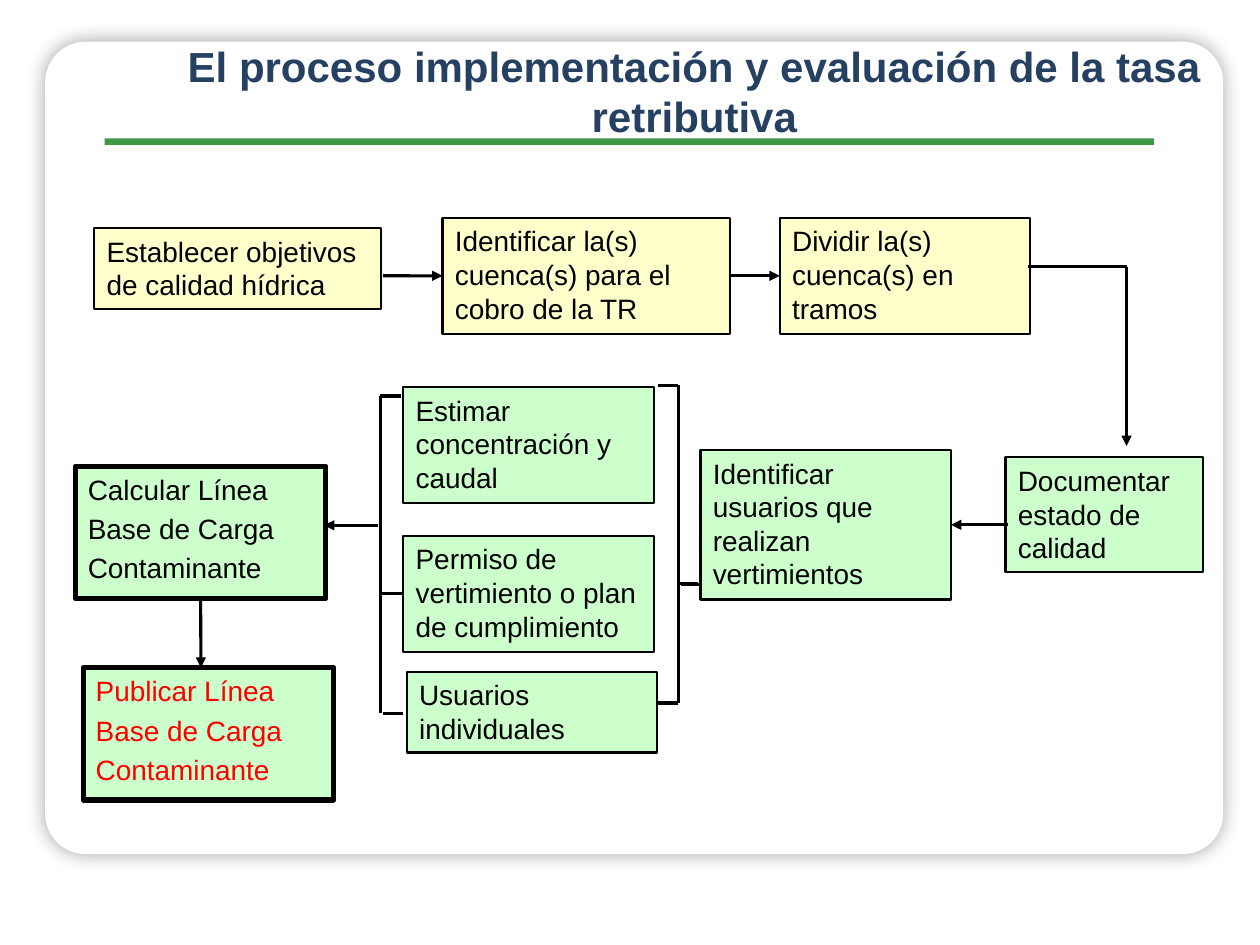
from lxml import etree
from pptx import Presentation
from pptx.dml.color import RGBColor
from pptx.enum.shapes import MSO_CONNECTOR as CONN, MSO_SHAPE as SHAPE
from pptx.enum.text import MSO_ANCHOR as ANCHOR, MSO_AUTO_SIZE as AUTO, PP_ALIGN as ALIGN
from pptx.oxml.ns import qn
from pptx.util import Cm, Pt

COLORS = {
    "white": "FFFFFF", "black": "000000", "green": "3D9948", "navy": "254061",
    "yellow": "FFFFCC", "mint": "CCFFCC", "red": "FF0000",
}
TOP, LEFT, BOTTOM, RIGHT = range(4)


def rgb(name):
    return RGBColor.from_string(COLORS[name])


class Diagram:
    font = "Arial"
    text_size = 16
    title_size = 24

    def __init__(self, slide):
        self.slide = slide
        self.shapes = slide.shapes

    def shape(self, kind, x, y, w, h, fill):
        s = self.shapes.add_shape(kind, Cm(x), Cm(y), Cm(w), Cm(h))
        s.shadow.inherit = False
        s.fill.solid()
        s.fill.fore_color.rgb = rgb(fill)
        s.line.fill.background()
        return s

    def panel(self, x, y, w, h):
        s = self.shape(SHAPE.ROUNDED_RECTANGLE, x, y, w, h, "white")
        s.adjustments[0] = 0.05
        effects = s._element.spPr.find(qn("a:effectLst"))
        shadow = etree.SubElement(effects, qn("a:outerShdw"), blurRad=str(Pt(10.8)),
                                  dist="0", dir="5400000", algn="ctr", rotWithShape="0")
        color = etree.SubElement(shadow, qn("a:srgbClr"), val=COLORS["black"])
        etree.SubElement(color, qn("a:alpha"), val="35000")

    def style(self, p, size, color, align, bold=False):
        p.alignment = align
        f = p.font
        f.name, f.size, f.bold = self.font, Pt(size), bold
        f.color.rgb = rgb(color)

    def title(self, text, x, y, w, h):
        s = self.shapes.title
        s.left, s.top, s.width, s.height = Cm(x), Cm(y), Cm(w), Cm(h)
        tf = s.text_frame
        tf.text = text
        tf.word_wrap = True
        tf.auto_size = AUTO.NONE
        tf.vertical_anchor = ANCHOR.TOP
        p = tf.paragraphs[0]
        p.line_spacing = 1.0
        p.space_before = Pt(0)
        self.style(p, self.title_size, "navy", ALIGN.CENTER, bold=True)
        # Bring the title in front of the panel
        self.shapes._spTree.append(s._element)

    def box(self, lines, x, y, w, h, fill="mint", border=1.25, color="black"):
        s = self.shape(SHAPE.RECTANGLE, x, y, w, h, fill)
        s.line.color.rgb = rgb("black")
        s.line.width = Pt(border)
        tf = s.text_frame
        tf.word_wrap = True
        tf.vertical_anchor = ANCHOR.TOP
        for i, line in enumerate(lines):
            p = tf.add_paragraph() if i else tf.paragraphs[0]
            p.text = line
            if i:
                p.space_before = Pt(0.2 * self.text_size)
            self.style(p, self.text_size, color, ALIGN.LEFT)
        return s

    def line(self, x1, y1, x2, y2, width=1.75, arrow=False, begin=None, end=None):
        c = self.shapes.add_connector(CONN.STRAIGHT, Cm(x1), Cm(y1), Cm(x2), Cm(y2))
        c.line.color.rgb = rgb("black")
        c.line.width = Pt(width)
        if arrow:
            etree.SubElement(c.line._get_or_add_ln(), qn("a:tailEnd"), type="triangle")
        etree.SubElement(c._element.spPr, qn("a:effectLst"))
        if begin:
            c.begin_connect(*begin)
        if end:
            c.end_connect(*end)


def main():
    prs = Presentation()
    prs.slide_width, prs.slide_height = Cm(25.4), Cm(19.05)
    d = Diagram(prs.slides.add_slide(prs.slide_layouts[5]))

    # Frame and title
    d.panel(0.91, 0.84, 23.75, 16.38)
    d.shape(SHAPE.RECTANGLE, 2.11, 2.79, 21.16, 0.13, "green")
    d.title("El proceso implementación y evaluación de la tasa retributiva",
            2.59, 0.69, 22.81, 2.31)

    # Preparation steps
    d.box(["Establecer objetivos de calidad hídrica"], 1.9, 4.6, 5.79, 1.63, "yellow")
    basin = d.box(["Identificar la(s) cuenca(s) para el cobro de la TR"],
                  8.92, 4.39, 5.79, 2.34, "yellow")
    reaches = d.box(["Dividir la(s) cuenca(s) en tramos"], 15.72, 4.39, 5.05, 2.34, "yellow")

    # Assessment steps
    d.box(["Documentar estado de calidad"], 20.27, 9.22, 3.99, 2.31)
    users = d.box(["Identificar usuarios que realizan vertimientos"],
                  14.12, 9.07, 5.05, 3.02, border=1.5)
    d.box(["Estimar concentración y caudal"], 8.13, 7.8, 5.05, 2.34)
    permit = d.box(["Permiso de vertimiento o plan de cumplimiento"], 8.13, 10.8, 5.05, 2.34)
    d.box(["Usuarios individuales"], 8.2, 13.54, 5.05, 1.63)

    # Baseline results
    rest = ["Base de Carga", "Contaminante"]
    baseline = d.box(["Calcular Línea"] + rest, 1.52, 9.4, 5.05, 2.67, border=3)
    d.box(["Publicar Línea"] + rest, 1.68, 13.46, 5.05, 2.67, border=3, color="red")

    # Flow arrows
    d.line(7.72, 5.56, 8.92, 5.56, arrow=True, end=(basin, LEFT))
    d.line(14.71, 5.56, 15.72, 5.56, arrow=True, begin=(basin, RIGHT), end=(reaches, LEFT))
    d.line(20.73, 5.38, 22.71, 5.38)
    d.line(22.71, 5.38, 22.71, 8.99, arrow=True)
    d.line(20.32, 10.58, 19.17, 10.58, arrow=True, end=(users, RIGHT))
    d.line(7.62, 10.59, 6.53, 10.59, arrow=True)
    d.line(4.05, 12.07, 4.05, 13.46, arrow=True, begin=(baseline, BOTTOM))

    # Left bracket
    tick = 0.41
    d.line(7.67, 7.98, 7.67, 14.38)
    d.line(7.67, 11.97, 8.13, 11.97, end=(permit, LEFT))
    for x, y in [(7.67, 7.98), (7.72, 14.38)]:
        d.line(x, y, x + tick, y, width=2)

    # Right bracket
    d.line(13.67, 7.77, 13.67, 14.17)
    d.line(13.72, 11.79, 13.72 + tick, 11.79)
    for x, y in [(13.26, 7.77), (13.26, 14.17), (13.67, 11.76)]:
        d.line(x, y, x + tick, y, width=2)

    prs.save("out.pptx")


if __name__ == "__main__":
    main()
